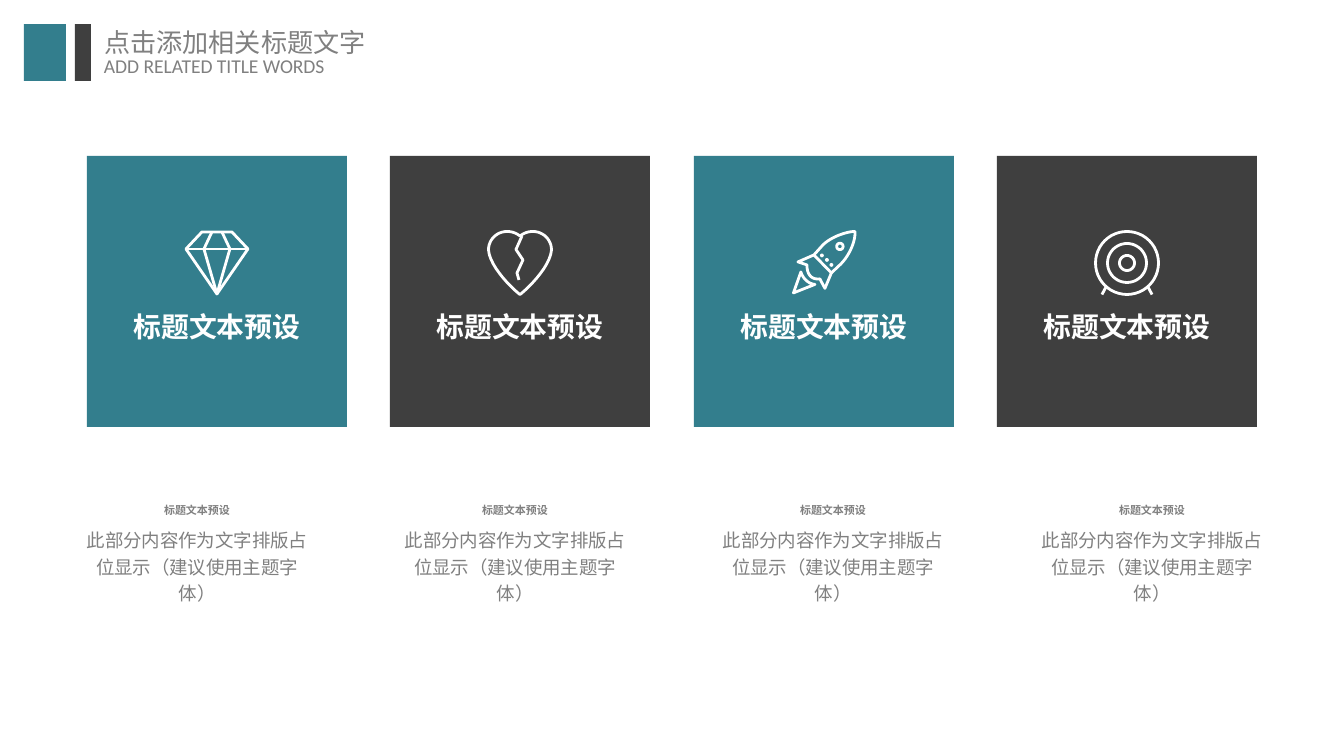
from dataclasses import dataclass
import math

from lxml import etree
from pptx import Presentation
from pptx import util as u
from pptx.dml.color import RGBColor
from pptx.enum import shapes, text
from pptx.oxml.ns import qn

EMU_PER_PX = 914400 / 134.4


def px(value):
    return u.Emu(round(value * EMU_PER_PX))


@dataclass(frozen=True)
class Theme:
    teal: str = "337E8D"
    dark: str = "3F3F3F"
    grey: str = "808080"
    white: str = "FFFFFF"
    latin: str = "Calibri"
    chinese: str = "Noto Sans CJK SC"
    title: float = 14
    subtitle: float = 10.5
    card: float = 14.9
    label: float = 5.9
    body: float = 9.9
    stroke: float = 1.5


def curve(start, first, second, end, steps=12):
    points = []
    for step in range(steps + 1):
        t = step / steps
        weights = ((1 - t) ** 3, 3 * t * (1 - t) ** 2, 3 * t * t * (1 - t), t ** 3)
        corners = (start, first, second, end)
        points.append(tuple(sum(w * c[axis] for w, c in zip(weights, corners))
                            for axis in (0, 1)))
    return points


def circle(x, y, radius, steps=48):
    angles = [2 * math.pi * step / steps for step in range(steps + 1)]
    return [(x + radius * math.cos(a), y + radius * math.sin(a)) for a in angles]


def mirror(points):
    return [(66 - x, y) for x, y in points]


def diamond_icon():
    side = [(33, 64), (2, 19), (18, 2), (33, 2)]
    facet = [(28, 2), (20, 19), (33, 64)]
    return [side + mirror(side)[::-1], [(2, 19), (64, 19)], facet, mirror(facet)]


def heart_icon():
    half = (curve((33, 6), (37, 3), (41, 1.5), (46, 1.5))
            + curve((46, 1.5), (56, 1.5), (64.5, 9.5), (64.5, 20))
            + curve((64.5, 20), (63, 38), (38, 61), (33, 64.5)))
    crack = [(35, 6), (29, 19.5), (36, 30), (30, 43), (32, 50)]
    return [half + mirror(half)[::-1], crack]


def rocket_icon():
    body = (curve((64, 1.5), (56, 1.5), (40, 7), (32, 15)) + [(23, 25), (40.5, 43)]
            + curve((50, 34), (59, 25), (65, 10), (64, 1.5)))
    fins = ([(23, 25), (7, 32)] + curve((16, 35), (16, 44), (20, 50), (29, 49))
            + [(34, 58.5), (40.5, 43)])
    flame = [(10, 42), (2.5, 63)] + curve((24, 54.5), (18, 54), (12, 49), (10, 42))
    dots = [circle(x, y, 0.5) for x, y in ((31, 25.5), (36, 30), (40.5, 35))]
    return [body, fins, flame, circle(49, 16.5, 3.2)] + dots


def target_icon():
    leg = [(12, 57), (8, 64.5)]
    rings = [circle(33, 33, radius) for radius in (31.5, 19.5, 7.5)]
    return rings + [leg, mirror(leg)]


class SlideBuilder:
    def __init__(self, slide, theme):
        self.slide = slide
        self.theme = theme

    def add_text(self, shape, content, size, color, font, bold=False,
                 align=text.PP_ALIGN.LEFT, margins=(0, 0, 0, 0), wrap=False,
                 anchor=text.MSO_ANCHOR.TOP, spacing=1.0):
        frame = shape.text_frame
        frame.word_wrap = wrap
        frame.auto_size = text.MSO_AUTO_SIZE.NONE
        frame.vertical_anchor = anchor
        (frame.margin_left, frame.margin_top,
         frame.margin_right, frame.margin_bottom) = map(px, margins)
        paragraph = frame.paragraphs[0]
        paragraph.alignment = align
        paragraph.line_spacing = spacing
        run = paragraph.add_run()
        run.text = content
        run.font.size = u.Pt(size)
        run.font.bold = bold
        run.font.color.rgb = RGBColor.from_string(color)
        run.font.name = font
        east_asian = etree.SubElement(run._r.get_or_add_rPr(), qn("a:ea"))
        east_asian.set("typeface", self.theme.chinese)

    def title(self, box, content, **style):
        shape = self.slide.shapes.title
        shape.left, shape.top, shape.width, shape.height = map(px, box)
        self.add_text(shape, content, **style)

    def textbox(self, box, content, container=None, **style):
        owner = container or self.slide
        self.add_text(owner.shapes.add_textbox(*map(px, box)), content, **style)

    def rectangle(self, box, color):
        shape = self.slide.shapes.add_shape(
            shapes.MSO_SHAPE.RECTANGLE, *map(px, box))
        shape.shadow.inherit = False
        shape.fill.solid()
        shape.fill.fore_color.rgb = RGBColor.from_string(color)
        shape.line.fill.background()
        return shape

    def card(self, box, color, content):
        self.add_text(self.rectangle(box, color), content, self.theme.card,
                      self.theme.white, self.theme.latin, bold=True,
                      align=text.PP_ALIGN.CENTER, margins=(10, 75, 10, 5),
                      wrap=True, anchor=text.MSO_ANCHOR.MIDDLE)

    def icon(self, left, top, strokes):
        outlines = [[(px(left + x), px(top + y)) for x, y in points]
                    for points in strokes]
        builder = self.slide.shapes.build_freeform(*outlines[0][0], scale=1.0)
        for index, points in enumerate(outlines):
            if index:
                builder.move_to(*points[0])
            builder.add_line_segments(points[1:], close=False)
        shape = builder.convert_to_shape()
        shape.shadow.inherit = False
        shape.fill.background()
        shape.line.color.rgb = RGBColor.from_string(self.theme.white)
        shape.line.width = u.Pt(self.theme.stroke)
        etree.SubElement(shape._element.spPr.find(qn("a:ln")), qn("a:round"))

    def caption(self, left, top, label, body):
        group = self.slide.shapes.add_group_shape()
        style = dict(color=self.theme.grey, font=self.theme.chinese,
                     align=text.PP_ALIGN.CENTER, container=group)
        self.textbox((left + 2, top, 228, 21), label,
                     size=self.theme.label, bold=True, **style)
        self.textbox((left, top + 21, 232, 74), body,
                     size=self.theme.body, wrap=True, spacing=1.2, **style)


def main():
    theme = Theme()
    presentation = Presentation()
    presentation.slide_width, presentation.slide_height = px(1344), px(756)
    slide = presentation.slides.add_slide(presentation.slide_layouts[5])
    builder = SlideBuilder(slide, theme)

    builder.rectangle((24, 24, 42, 57), theme.teal)
    builder.rectangle((75, 24, 16, 57), theme.dark)
    header = dict(color=theme.grey, margins=(14, 7, 14, 7))
    builder.title((90, 19, 293, 46), "点击添加相关标题文字",
                  size=theme.title, font=theme.chinese, **header)
    builder.textbox((90, 47, 265, 39), "ADD RELATED TITLE WORDS",
                    size=theme.subtitle, font=theme.latin, **header)

    icons = (diamond_icon, heart_icon, rocket_icon, target_icon)
    for index, icon in enumerate(icons):
        left = 87 + 607 * index // 2
        color = theme.dark if index % 2 else theme.teal
        builder.card((left, 156, 260, 271), color, "标题文本预设")
        builder.icon(left + 97, 230, icon())
        builder.caption(81 + 955 * index // 3, 504, "标题文本预设",
                        "此部分内容作为文字排版占位显示（建议使用主题字体）")

    presentation.save("out.pptx")


if __name__ == "__main__":
    main()
